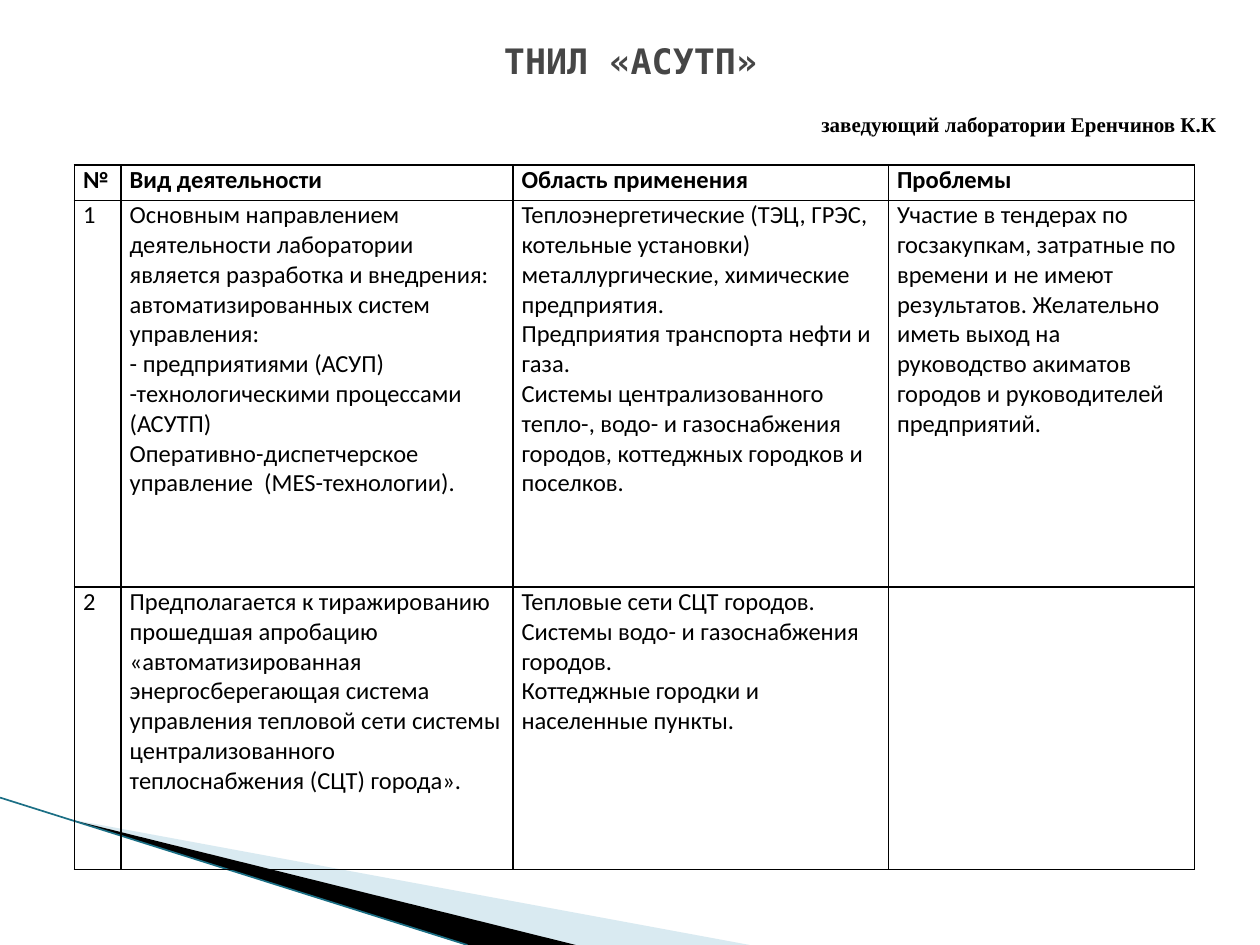
from lxml import etree
from pptx import Presentation
from pptx.dml.color import RGBColor
from pptx.enum.shapes import MSO_CONNECTOR as Connector
from pptx.enum.text import MSO_ANCHOR as Anchor, PP_ALIGN as Align
from pptx.oxml.ns import qn
from pptx.util import Inches, Pt

BLACK = RGBColor(0x00, 0x00, 0x00)
TITLE_GREY = RGBColor(0x46, 0x46, 0x46)
PALE_BLUE = RGBColor(0xA0, 0xCB, 0xDC)
TEAL = RGBColor(0x1B, 0x6F, 0x85)

COLUMN_WIDTHS = [0.37, 3.11, 2.98, 2.43]
ROW_HEIGHTS = [0.28, 3.07, 2.24]
# Each cell is a list of paragraphs
ROWS = [
    [["№"], ["Вид деятельности"], ["Область применения"], ["Проблемы"]],
    [
        ["1"],
        ["Основным направлением деятельности лаборатории является разработка и внедрения:",
         "автоматизированных систем управления:",
         "- предприятиями (АСУП)",
         "-технологическими процессами (АСУТП)",
         "Оперативно-диспетчерское управление  (MES-технологии)."],
        ["Теплоэнергетические (ТЭЦ, ГРЭС, котельные установки) "
         "металлургические, химические предприятия.",
         "Предприятия транспорта нефти и газа.",
         "Системы централизованного тепло-, водо- и газоснабжения городов, "
         "коттеджных городков и поселков."],
        ["Участие в тендерах по госзакупкам, затратные по времени и не имеют результатов. "
         "Желательно иметь выход на руководство акиматов городов и руководителей предприятий."],
    ],
    [
        ["2"],
        ["Предполагается к тиражированию прошедшая апробацию «автоматизированная "
         "энергосберегающая система управления тепловой сети системы централизованного "
         "теплоснабжения (СЦТ) города»."],
        ["Тепловые сети СЦТ городов.",
         "Системы водо- и газоснабжения городов.",
         "Коттеджные городки и населенные пункты."],
        [],
    ],
]


def set_font(para, name, size, color, bold):
    font = para.font
    font.name, font.size, font.bold = name, Pt(size), bold
    font.color.rgb = color


def add_wedge(page, points, color, opacity=None):
    corners = [(Inches(x), Inches(y)) for x, y in points]
    builder = page.shapes.build_freeform(*corners[0])
    builder.add_line_segments(corners[1:])
    wedge = builder.convert_to_shape()
    wedge.shadow.inherit = False
    wedge.fill.solid()
    wedge.fill.fore_color.rgb = color
    wedge.line.fill.background()
    if opacity is not None:
        fill_color = wedge.fill._xPr.find(qn("a:solidFill"))[0]
        etree.SubElement(fill_color, qn("a:alpha"), val=str(opacity * 1000))


def add_corner_decor(page, left, top, right, bottom):
    """Two wedges and a thin line fanning out to the bottom edge."""
    apex = (left + 0.54, top + 0.17)
    add_wedge(page, [apex, (right, bottom), (right - 1.39, bottom)], PALE_BLUE, 40)
    add_wedge(page, [apex, (right - 1.38, bottom), (right - 2.25, bottom)], BLACK)
    edge = page.shapes.add_connector(Connector.STRAIGHT, Inches(left), Inches(top),
                                     Inches(right - 2.24), Inches(bottom))
    edge.line.color.rgb = TEAL
    edge.line.width = Pt(0.95)
    etree.SubElement(edge._element.spPr, qn("a:effectLst"))


def add_label(page, left, top, width, height, text, font, size, color, align, anchor):
    box = page.shapes.add_textbox(Inches(left), Inches(top), Inches(width), Inches(height))
    frame = box.text_frame
    frame.word_wrap = True
    frame.vertical_anchor = anchor
    para = frame.paragraphs[0]
    para.text = text
    para.alignment = align
    set_font(para, font, size, color, True)


def add_borders(cell, color, width):
    properties = cell._tc.get_or_add_tcPr()
    for index, side in enumerate(("lnL", "lnR", "lnT", "lnB")):
        line = etree.Element(qn(f"a:{side}"), w=str(Pt(width)))
        fill = etree.SubElement(line, qn("a:solidFill"))
        etree.SubElement(fill, qn("a:srgbClr"), val=str(color))
        properties.insert(index, line)


def fill_cell(cell, lines, bold):
    cell.fill.background()
    cell.margin_left = cell.margin_right = Inches(0.07)
    cell.margin_top = cell.margin_bottom = 0
    cell.text = "\n".join(lines)
    for para in cell.text_frame.paragraphs:
        set_font(para, "Calibri", 14, BLACK, bold)
    add_borders(cell, BLACK, 1)


def add_activity_table(page, left, top, width, height):
    table = page.shapes.add_table(len(ROWS), len(COLUMN_WIDTHS), Inches(left), Inches(top),
                                  Inches(width), Inches(height)).table
    table.first_row = table.horz_banding = False
    for column, column_width in zip(table.columns, COLUMN_WIDTHS):
        column.width = Inches(column_width)
    for index, (row, row_height) in enumerate(zip(table.rows, ROW_HEIGHTS)):
        row.height = Inches(row_height)
        for cell, lines in zip(row.cells, ROWS[index]):
            fill_cell(cell, lines, bold=index == 0)


def main():
    deck = Presentation()
    deck.slide_width, deck.slide_height = Inches(10), Inches(7.5)
    page = deck.slides.add_slide(deck.slide_layouts[6])

    add_corner_decor(page, 0, 6.33, 5.95, 7.5)
    # Title and head of the laboratory
    add_label(page, 0.2, 0.13, 9.61, 0.7, "ТНИЛ «АСУТП»",
              "DejaVu Sans Mono", 20, TITLE_GREY, Align.CENTER, Anchor.MIDDLE)
    add_label(page, 6.42, 0.84, 3.39, 0.3, "заведующий лаборатории Еренчинов К.К",
              "Times New Roman", 12, BLACK, Align.LEFT, Anchor.TOP)
    add_activity_table(page, 0.59, 1.31, sum(COLUMN_WIDTHS), sum(ROW_HEIGHTS))

    deck.save("out.pptx")


if __name__ == "__main__":
    main()
